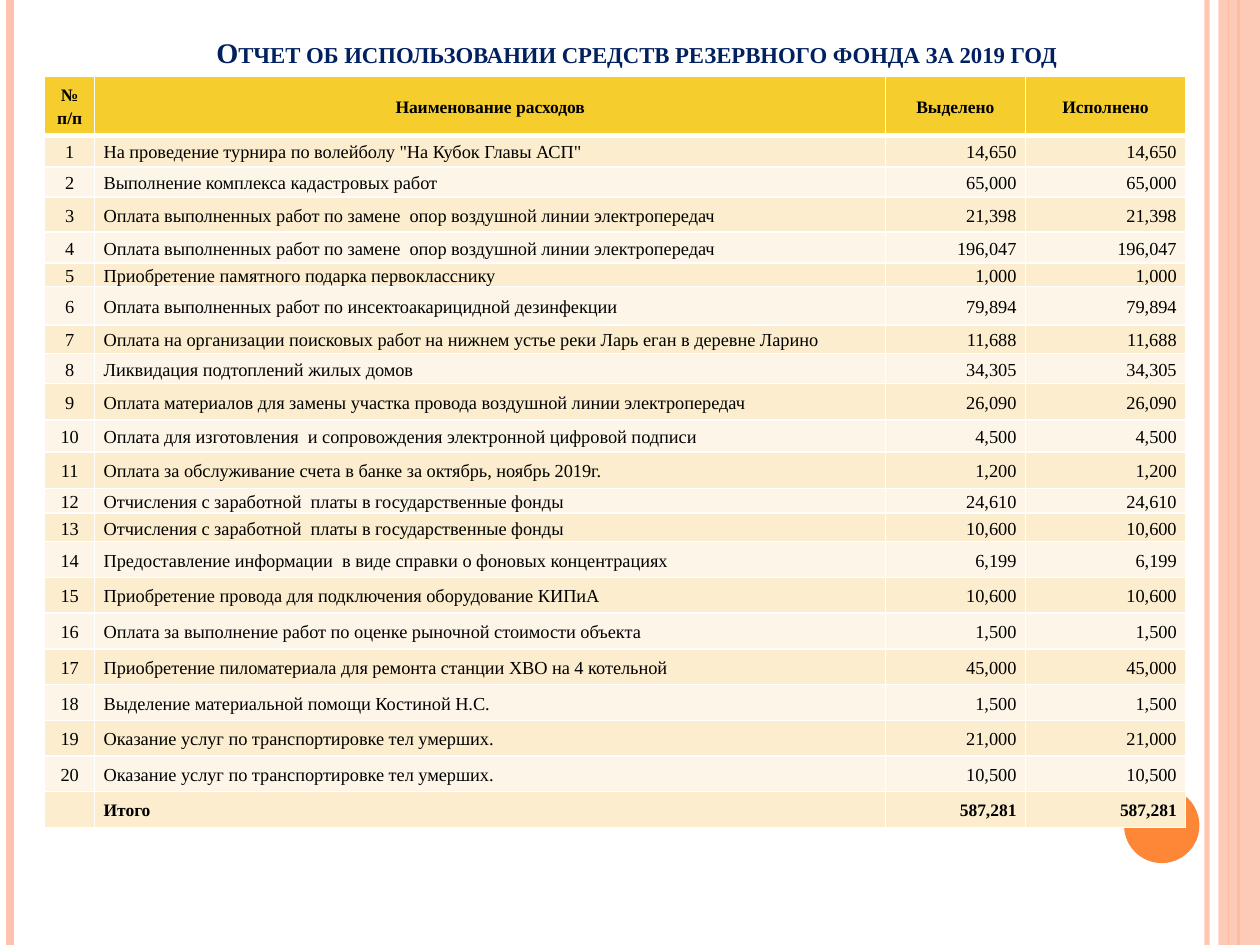
"""Build the slide on the use of the reserve fund in 2019."""
import lxml.etree
import pptx
import pptx.dml.color
import pptx.enum.shapes
import pptx.enum.text
import pptx.oxml.ns
import pptx.util

Cm = pptx.util.Cm
Pt = pptx.util.Pt
RGB = pptx.dml.color.RGBColor
ALIGN = pptx.enum.text.PP_ALIGN
ANCHOR = pptx.enum.text.MSO_ANCHOR
SHAPE = pptx.enum.shapes.MSO_SHAPE

NAVY = RGB(0x00, 0x20, 0x60)
BLACK = RGB(0x00, 0x00, 0x00)
WHITE = RGB(0xFF, 0xFF, 0xFF)
PINK = RGB(0xFE, 0xC3, 0xAE)
ORANGE = RGB(0xFE, 0x86, 0x37)
GOLD = RGB(0xF5, 0xCD, 0x2D)
SAND = RGB(0xFB, 0xED, 0xCD)
CREAM = RGB(0xFD, 0xF6, 0xE8)
FONT = "Times New Roman"


def put(item, form):
    """Set each format value on the item."""
    for key, value in form.items():
        setattr(item, key, value)


def add(node, tag, **attrs):
    """Add a child element with the given attributes."""
    return lxml.etree.SubElement(node, pptx.oxml.ns.qn(tag), **attrs)


deck = pptx.Presentation()
put(deck, {"slide_width": Cm(25.4), "slide_height": Cm(19.05)})
slide = deck.slides.add_slide(deck.slide_layouts[5])
shapes = slide.shapes

stripes = [
    (24.33, 3, PINK, 93),
    (0.2, 4.5, PINK, 100),
    (24.97, 1.5, ORANGE, 100),
    (24.77, 0.75, ORANGE, 100),
]
for left, width, tint, alpha in stripes:
    line = shapes.add_connector(
        pptx.enum.shapes.MSO_CONNECTOR.STRAIGHT, Cm(left), 0, Cm(left), Cm(19.05))
    line.line.width = Pt(width)
    line.line.color.rgb = tint
    add(line._element.spPr, "a:effectLst")
    if alpha < 100:
        tone = line._element.spPr.find(".//" + pptx.oxml.ns.qn("a:srgbClr"))
        add(tone, "a:alpha", val=str(alpha * 1000))

forms = [
    (SHAPE.RECTANGLE, 24.56, 0, 0.84, 19.05, PINK, 87),
    (SHAPE.OVAL, 22.66, 15.88, 1.52, 1.52, ORANGE, 100),
]
for kind, left, top, width, height, tint, alpha in forms:
    shape = shapes.add_shape(kind, Cm(left), Cm(top), Cm(width), Cm(height))
    shape.shadow.inherit = False
    shape.fill.solid()
    shape.fill.fore_color.rgb = tint
    shape.line.fill.background()
    if alpha < 100:
        tone = shape._element.spPr.find(".//" + pptx.oxml.ns.qn("a:srgbClr"))
        add(tone, "a:alpha", val=str(alpha * 1000))

title = shapes.title
put(title, {"left": Cm(1.4), "top": Cm(0.6), "width": Cm(22.86), "height": Cm(0.8)})
put(title.text_frame, {
    "text": "Отчет об использовании средств резервного фонда за 2019 год",
    "vertical_anchor": ANCHOR.BOTTOM, "word_wrap": True,
    "auto_size": pptx.enum.text.MSO_AUTO_SIZE.NONE,
    "margin_top": 0, "margin_bottom": 0})
para = title.text_frame.paragraphs[0]
para.alignment = ALIGN.CENTER
font = para.runs[0].font
put(font, {"name": FONT, "size": Pt(16.2), "bold": True})
font.color.rgb = NAVY
font._element.set("cap", "small")

costs = [
    ("На проведение турнира по волейболу \"На Кубок Главы АСП\"", "14,650", 0.64),
    ("Выполнение комплекса кадастровых работ", "65,000", 0.6),
    ("Оплата выполненных работ по замене  опор воздушной линии электропередач", "21,398", 0.71),
    ("Оплата выполненных работ по замене  опор воздушной линии электропередач", "196,047", 0.62),
    ("Приобретение памятного подарка первокласснику", "1,000", 0.48),
    ("Оплата выполненных работ по инсектоакарицидной дезинфекции", "79,894", 0.77),
    ("Оплата на организации поисковых работ на нижнем устье реки Ларь еган в деревне Ларино",
     "11,688", 0.58),
    ("Ликвидация подтоплений жилых домов", "34,305", 0.6),
    ("Оплата материалов для замены участка провода воздушной линии электропередач",
     "26,090", 0.74),
    ("Оплата для изготовления  и сопровождения электронной цифровой подписи", "4,500", 0.64),
    ("Оплата за обслуживание счета в банке за октябрь, ноябрь 2019г.", "1,200", 0.74),
    ("Отчисления с заработной  платы в государственные фонды", "24,610", 0.49),
    ("Отчисления с заработной  платы в государственные фонды", "10,600", 0.58),
    ("Предоставление информации  в виде справки о фоновых концентрациях", "6,199", 0.72),
    ("Приобретение провода для подключения оборудование КИПиА", "10,600", 0.72),
    ("Оплата за выполнение работ по оценке рыночной стоимости объекта", "1,500", 0.72),
    ("Приобретение пиломатериала для ремонта станции ХВО на 4 котельной", "45,000", 0.72),
    ("Выделение материальной помощи Костиной Н.С.", "1,500", 0.72),
    ("Оказание услуг по транспортировке тел умерших.", "21,000", 0.72),
    ("Оказание услуг по транспортировке тел умерших.", "10,500", 0.72),
]
rows = [("№ п/п", "Наименование расходов", "Выделено", "Исполнено")]
rows += [(str(num), name, sum_, sum_) for num, (name, sum_, _) in enumerate(costs, 1)]
rows += [("", "Итого", "587,281", "587,281")]
heights = [1.2] + [cost[2] for cost in costs] + [0.72]
widths = [1.01, 15.94, 2.82, 3.23]
aligns = [ALIGN.CENTER, ALIGN.JUSTIFY, ALIGN.RIGHT, ALIGN.RIGHT]

frame = shapes.add_table(len(rows), len(widths), Cm(0.9), Cm(1.53),
                         Cm(sum(widths)), Cm(sum(heights)))
table = frame.table
put(table, {"first_row": False, "horz_banding": False})
for col, width in zip(table.columns, widths):
    col.width = Cm(width)
for row, height in zip(table.rows, heights):
    row.height = Cm(height)

last = len(rows) - 1
for i, row in enumerate(rows):
    head = i == 0
    bold = i in (0, last)
    tint = GOLD if head else SAND if i % 2 else CREAM
    size = 10 if bold else 10.5
    for j, text in enumerate(row):
        cell = table.cell(i, j)
        put(cell, {"text": text, "vertical_anchor": ANCHOR.MIDDLE,
                   "margin_left": Cm(0.18), "margin_right": Cm(0.18),
                   "margin_top": 0, "margin_bottom": 0})
        props = cell._tc.get_or_add_tcPr()
        for side in "LRTB":
            thick = 3 if (head and side == "B") or (i == 1 and side == "T") else 1
            edge = add(props, "a:ln" + side, w=str(Pt(thick)))
            add(add(edge, "a:solidFill"), "a:srgbClr", val=str(WHITE))
        cell.fill.solid()
        cell.fill.fore_color.rgb = tint
        para = cell.text_frame.paragraphs[0]
        put(para, {"alignment": ALIGN.CENTER if head else aligns[j], "line_spacing": 1.15})
        for run in para.runs:
            put(run.font, {"name": FONT, "size": Pt(size), "bold": bold})
            run.font.color.rgb = BLACK
        if not text:
            add(para._p, "a:endParaRPr", sz=str(size * 100))

deck.save("out.pptx")
